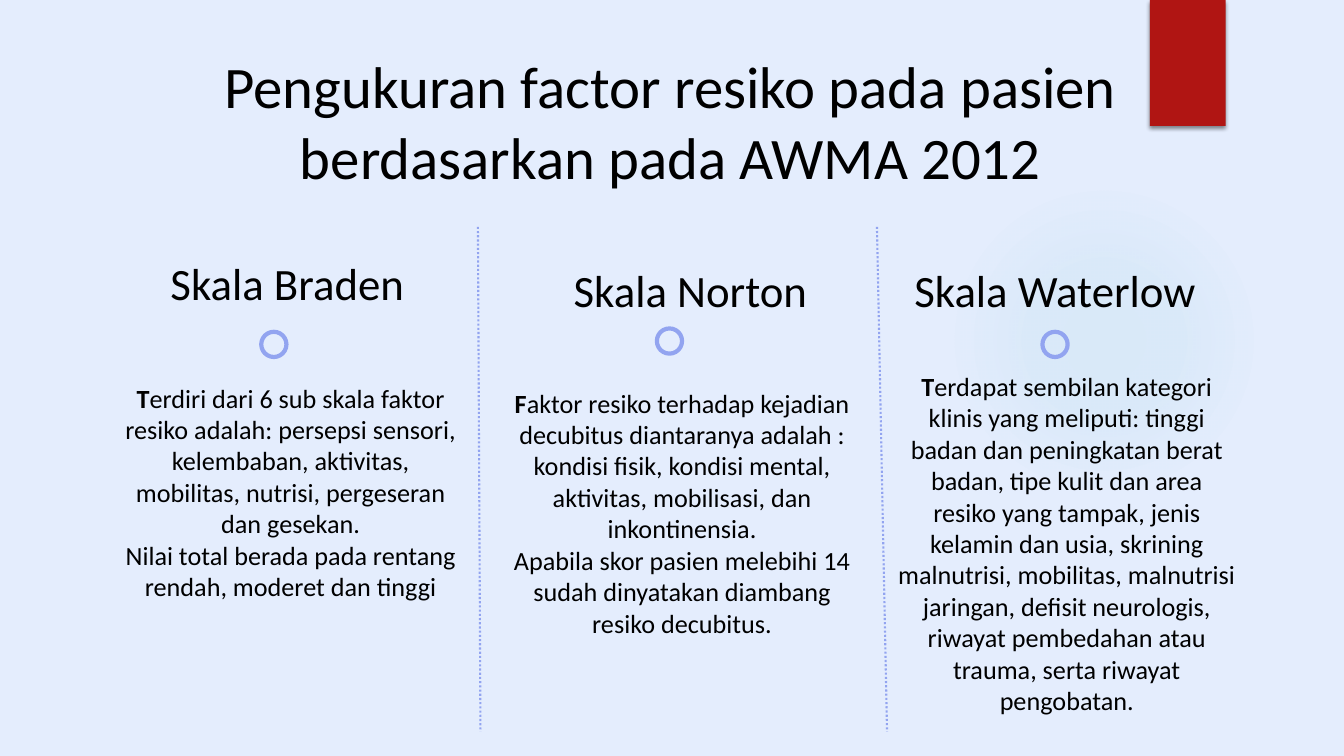
"""Build a slide comparing three pressure-injury risk scales."""
from lxml import etree
from pptx import Presentation
from pptx.dml.color import RGBColor
from pptx.enum.dml import MSO_LINE
from pptx.enum.shapes import MSO_CONNECTOR, MSO_SHAPE
from pptx.enum.text import MSO_ANCHOR, PP_ALIGN
from pptx.oxml import parse_xml
from pptx.oxml.ns import nsdecls, qn
from pptx.util import Inches, Pt

OVAL, RECTANGLE = MSO_SHAPE.OVAL, MSO_SHAPE.RECTANGLE
STRAIGHT, DOTTED = MSO_CONNECTOR.STRAIGHT, MSO_LINE.ROUND_DOT
TOP, MIDDLE, CENTER = MSO_ANCHOR.TOP, MSO_ANCHOR.MIDDLE, PP_ALIGN.CENTER

BACKGROUND = RGBColor(0xE4, 0xED, 0xFD)
RED = RGBColor(0xB0, 0x15, 0x13)
PERIWINKLE = RGBColor(0x92, 0xA4, 0xF0)
TEAL = RGBColor(0x50, 0xB9, 0xC1)
BLACK = RGBColor(0, 0, 0)

FONT = "Calibri"
COLUMNS, ROWS = 16, 9
CELL = Inches(7.5) // ROWS
COLUMN_WIDTH = 4.36
RING_SIZE = 0.3
HALO_STOPS = ((0, 7), (36, 6), (69, 0))
DIVIDERS = ((5.69, 5.72), (10.44, 10.56))

SCALES = (
    {
        "heading": ("Skala Braden", 1.24, 2.86),
        "ring": (3.11, 3.95),
        "body": (
            "Terdiri dari 6 sub skala faktor resiko adalah: persepsi sensori, "
            "kelembaban, aktivitas, mobilitas, nutrisi, pergeseran dan gesekan.\n"
            "Nilai total berada pada rentang rendah, moderet dan tinggi",
            1.28, 4.39),
    },
    {
        "heading": ("Skala Norton", 6.04, 2.94),
        "ring": (7.82, 3.91),
        "body": (
            "Faktor resiko terhadap kejadian decubitus diantaranya adalah : "
            "kondisi fisik, kondisi mental, aktivitas, mobilisasi, dan inkontinensia.\n"
            "Apabila skor pasien melebihi 14 sudah dinyatakan diambang "
            "resiko decubitus.",
            5.94, 4.45),
    },
    {
        "heading": ("Skala Waterlow", 10.38, 2.94),
        "ring": (12.41, 3.95),
        "body": (
            "Terdapat sembilan kategori klinis yang meliputi: tinggi badan dan "
            "peningkatan berat badan, tipe kulit dan area resiko yang tampak, "
            "jenis kelamin dan usia, skrining malnutrisi, mobilitas, malnutrisi "
            "jaringan, defisit neurologis, riwayat pembedahan atau trauma, "
            "serta riwayat pengobatan.",
            10.52, 4.25),
    },
)


def cells(*lengths):
    """Turn grid lengths into slide units."""
    return [round(length * CELL) for length in lengths]


def add_text(slide, text, x, y, width, height, size, anchor=TOP, bold_initial=False):
    """Add centred text, one paragraph per line, optionally with a bold first letter."""
    frame = slide.shapes.add_textbox(*cells(x, y, width, height)).text_frame
    frame.word_wrap = True
    frame.vertical_anchor = anchor
    frame.margin_left = frame.margin_right = Inches(0.13)
    frame.margin_top = frame.margin_bottom = Inches(0.13)
    for index, line in enumerate(text.split("\n")):
        paragraph = frame.paragraphs[0] if index == 0 else frame.add_paragraph()
        paragraph.alignment = CENTER
        split = 1 if bold_initial and index == 0 else 0
        for part, bold in ((line[:split], True), (line[split:], False)):
            if part:
                run = paragraph.add_run()
                run.text = part
                run.font.name = FONT
                run.font.size = Pt(size)
                run.font.bold = bold
                run.font.color.rgb = BLACK


def add_figure(slide, preset, x, y, width, height, fill=None, outline=None):
    """Add a preset shape with an optional solid fill and outline."""
    figure = slide.shapes.add_shape(preset, *cells(x, y, width, height))
    figure.shadow.inherit = False
    if fill is None:
        figure.fill.background()
    else:
        figure.fill.solid()
        figure.fill.fore_color.rgb = fill
    if outline is None:
        figure.line.fill.background()
    else:
        figure.line.color.rgb = outline
        figure.line.width = Pt(3)
    return figure


def add_halo(slide):
    """Add the faint round glow on the right."""
    properties = add_figure(slide, OVAL, 11.29, 2.2, 3.7, 3.7)._element.spPr
    stops = "".join(
        f'<a:gs pos="{position * 1000}"><a:srgbClr val="{TEAL}">'
        f'<a:alpha val="{alpha * 1000}"/></a:srgbClr></a:gs>'
        for position, alpha in HALO_STOPS)
    gradient = parse_xml(
        f'<a:gradFill {nsdecls("a")}><a:gsLst>{stops}</a:gsLst><a:path path="circle">'
        '<a:fillToRect l="50000" t="50000" r="50000" b="50000"/></a:path></a:gradFill>')
    properties.replace(properties.find(qn("a:noFill")), gradient)


def add_ribbon(slide):
    """Add the red ribbon with a soft shadow below it."""
    ribbon = add_figure(slide, RECTANGLE, 13.69, 0, 0.9, 1.5, fill=RED)
    effects = ribbon._element.spPr.find(qn("a:effectLst"))
    effects.append(parse_xml(
        f'<a:outerShdw {nsdecls("a")} blurRad="{Pt(3)}" dist="{Pt(2)}" dir="5400000" '
        'rotWithShape="0"><a:srgbClr val="000000"><a:alpha val="45000"/></a:srgbClr>'
        '</a:outerShdw>'))


def add_divider(slide, top_x, bottom_x):
    """Add a dotted line between two columns."""
    divider = slide.shapes.add_connector(STRAIGHT, *cells(top_x, 2.7, bottom_x, 8.71))
    divider.line.color.rgb = PERIWINKLE
    divider.line.width = Pt(1.5)
    divider.line.dash_style = DOTTED
    etree.SubElement(divider._element.spPr, qn("a:effectLst"))


def add_scale(slide, heading, ring, body):
    """Add one scale: its heading, ring and description."""
    add_text(slide, *heading, COLUMN_WIDTH, 1.01, size=32, anchor=MIDDLE)
    add_text(slide, *body, COLUMN_WIDTH, 1.31, size=18.7, bold_initial=True)
    add_figure(slide, OVAL, *ring, RING_SIZE, RING_SIZE, outline=PERIWINKLE)


def main():
    """Build and save the slide."""
    deck = Presentation()
    deck.slide_width, deck.slide_height = cells(COLUMNS, ROWS)
    slide = deck.slides.add_slide(deck.slide_layouts[6])
    slide.background.fill.solid()
    slide.background.fill.fore_color.rgb = BACKGROUND
    add_halo(slide)
    add_ribbon(slide)
    add_text(slide, "Pengukuran factor resiko pada pasien berdasarkan pada AWMA 2012",
             1.24, 0.44, 13.48, 1.01, size=42)
    for scale in SCALES:
        add_scale(slide, **scale)
    for top_x, bottom_x in DIVIDERS:
        add_divider(slide, top_x, bottom_x)
    deck.save("out.pptx")


if __name__ == "__main__":
    main()
